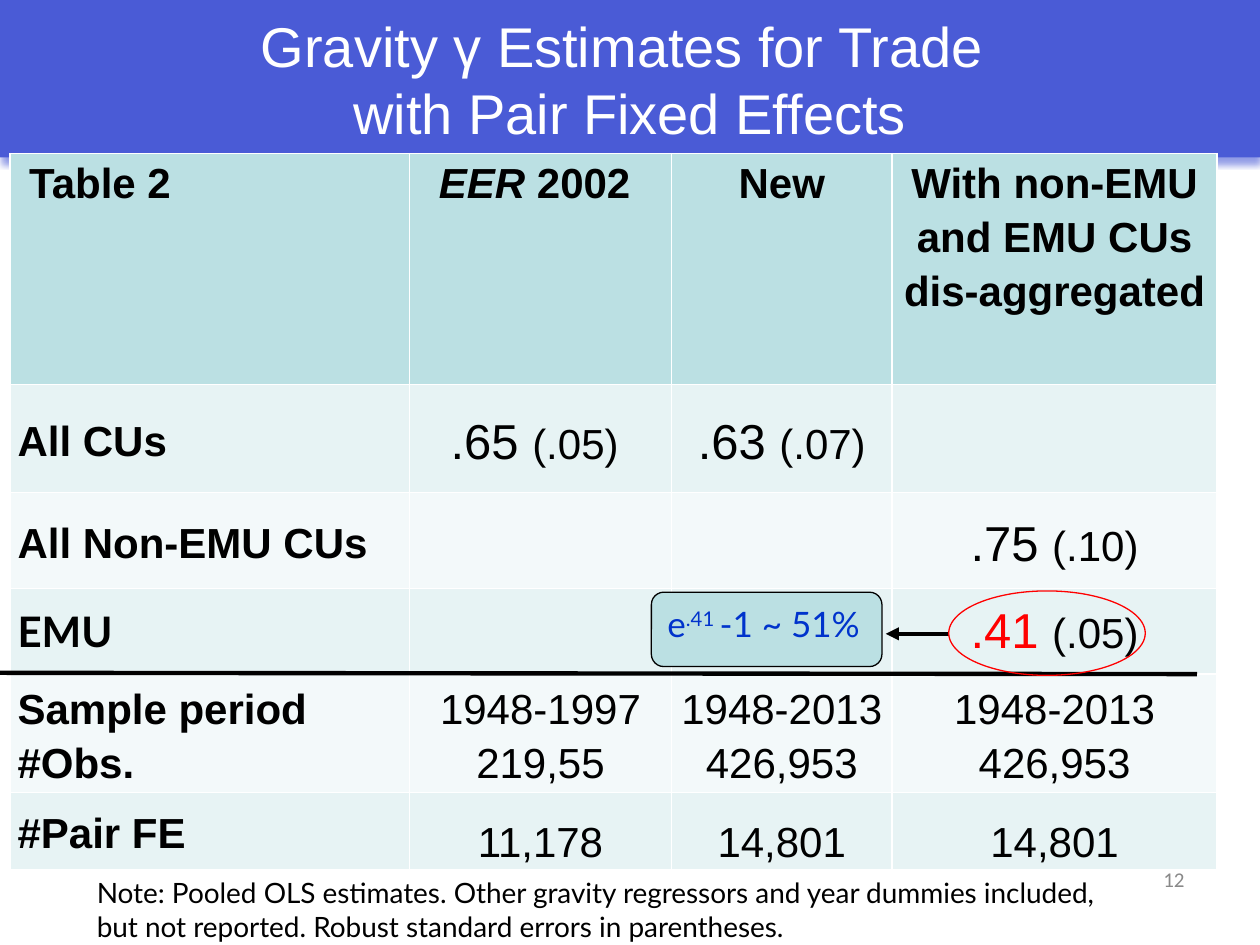
import pptx
import pptx.util
import pptx.dml.color
import pptx.enum.shapes
import pptx.enum.text
import pptx.oxml.ns
import lxml.etree

Inches = pptx.util.Inches
Pt = pptx.util.Pt
RGBColor = pptx.dml.color.RGBColor
Shape = pptx.enum.shapes.MSO_SHAPE
Align = pptx.enum.text.PP_ALIGN
Anchor = pptx.enum.text.MSO_ANCHOR
qn = pptx.oxml.ns.qn

WHITE = RGBColor(0xFF, 0xFF, 0xFF)
BLACK = RGBColor(0, 0, 0)
RED = RGBColor(0xFF, 0, 0)
GRAY = RGBColor(0x89, 0x89, 0x89)
BANNER = RGBColor(0x4A, 0x5B, 0xD6)
LINK_BLUE = RGBColor(0, 0x33, 0xCC)
TEAL = RGBColor(0xBB, 0xE0, 0xE3)
BANDS = (RGBColor(0xE7, 0xF3, 0xF4), RGBColor(0xF3, 0xF9, 0xFA))


class SlideBuilder:
    heading_font = "Arial"
    body_font = "Lato"

    def __init__(self, page):
        self.page = page

    def style(self, font, size, color, name=None, bold=None):
        font.size, font.name, font.bold = Pt(size), name or self.body_font, bold
        font.color.rgb = color

    def title(self, text, left, top, width, height):
        box = self.page.shapes.title
        box.left, box.top, box.width, box.height = map(Inches, (left, top, width, height))
        box.fill.solid()
        box.fill.fore_color.rgb = BANNER
        box.text_frame.text = text
        box.text_frame.vertical_anchor = Anchor.MIDDLE
        para = box.text_frame.paragraphs[0]
        para.alignment = Align.CENTER
        self.style(para.font, 32, WHITE, self.heading_font)
        # Soft shadow along the lower edge
        effects = lxml.etree.SubElement(box._element.spPr, qn("a:effectLst"))
        shadow = lxml.etree.SubElement(effects, qn("a:outerShdw"),
                                       blurRad="40000", dist="50000", dir="5400000")
        color = lxml.etree.SubElement(shadow, qn("a:srgbClr"), val=str(BANNER))
        lxml.etree.SubElement(color, qn("a:alpha"), val="60000")

    def text(self, text, left, top, width, height, size, color, name=None, align=None):
        box = self.page.shapes.add_textbox(*map(Inches, (left, top, width, height)))
        box.text_frame.word_wrap = True
        para = box.text_frame.paragraphs[0]
        para.text, para.alignment = text, align
        self.style(para.font, size, color, name)

    def shape(self, kind, left, top, width, height, line, fill=None):
        box = self.page.shapes.add_shape(kind, *map(Inches, (left, top, width, height)))
        box.shadow.inherit = False
        if fill is None:
            box.fill.background()
        else:
            box.fill.solid()
            box.fill.fore_color.rgb = fill
        box.line.color.rgb = line
        box.line.width = Pt(0.75)
        return box

    def formula(self, box, parts):
        frame = box.text_frame
        frame.word_wrap = False
        frame.vertical_anchor = Anchor.TOP
        para = frame.paragraphs[0]
        para.alignment = Align.LEFT
        self.style(para.font, 20, LINK_BLUE)
        for text, raised in parts:
            span = para.add_run()
            span.text = text
            if raised:
                span._r.get_or_add_rPr().set("baseline", "30000")

    def line(self, x1, y1, x2, y2, arrow=False):
        link = self.page.shapes.add_connector(
            pptx.enum.shapes.MSO_CONNECTOR.STRAIGHT, *map(Inches, (x1, y1, x2, y2)))
        link.line.color.rgb = BLACK
        link.line.width = Pt(2.5)
        if arrow:
            lxml.etree.SubElement(link.line._get_or_add_ln(), qn("a:tailEnd"), type="triangle")
        lxml.etree.SubElement(link._element.spPr, qn("a:effectLst"))

    def cell(self, cell, paragraphs, fill, anchor, align, spacing, name, bold):
        cell.fill.solid()
        cell.fill.fore_color.rgb = fill
        cell.vertical_anchor = anchor
        cell.margin_left = cell.margin_right = Inches(0.06)
        cell.margin_top = cell.margin_bottom = 0
        for index, spans in enumerate(paragraphs):
            frame = cell.text_frame
            para = frame.add_paragraph() if index else frame.paragraphs[0]
            para.alignment, para.line_spacing = align, spacing
            self.style(para.font, 24, BLACK, name, bold)
            for text, changes in spans:
                span = para.add_run()
                span.text = text
                span.font.italic = changes.get("italic")
                if "size" in changes:
                    span.font.size = Pt(changes["size"])
                if "color" in changes:
                    span.font.color.rgb = changes["color"]

    def table(self, rows, left, top, widths, heights):
        grid = self.page.shapes.add_table(
            len(rows), len(widths), Inches(left), Inches(top),
            Inches(sum(widths)), Inches(sum(heights))).table
        for column, width in zip(grid.columns, widths):
            column.width = Inches(width)
        for r, (row, height) in enumerate(zip(rows, heights)):
            grid.rows[r].height = Inches(height)
            for c, paragraphs in enumerate(row):
                spacing = 1.15
                if r == 3:
                    spacing = 1.0
                elif r == 5 and c:
                    spacing = 1.5
                self.cell(
                    grid.cell(r, c), paragraphs,
                    fill=BANDS[(r - 1) % 2] if r else TEAL,
                    anchor=Anchor.MIDDLE if r else Anchor.TOP,
                    align=Align.CENTER if c else Align.LEFT,
                    spacing=spacing,
                    name=self.body_font if (r, c) == (3, 0) else self.heading_font,
                    bold=r == 0 or c == 0)


def plain(*lines):
    return [[(line, {})] for line in lines]


def estimate(value, error, color=BLACK):
    return [[(value + " ", {"size": 28, "color": color}), (error, {})]]


EMPTY = []
ROWS = [
    [plain(" Table 2"), [[("EER", {"italic": True}), (" 2002 ", {})]],
     plain("New"), plain("With non-EMU and EMU CUs dis-aggregated")],
    [plain("All CUs"), estimate(".65", "(.05) "), estimate(".63", "(.07)"), EMPTY],
    [plain("All Non-EMU CUs"), EMPTY, EMPTY, estimate(".75", "(.10)")],
    [plain("EMU"), EMPTY, EMPTY, estimate(".41", "(.05)", RED)],
    [plain("Sample period", "#Obs."), plain("1948-1997", "219,55"),
     plain("1948-2013", "426,953"), plain("1948-2013", "426,953")],
    [plain("#Pair FE"), plain("11,178"), plain("14,801"), plain("14,801")],
]


def main():
    deck = pptx.Presentation()
    deck.slide_width, deck.slide_height = Inches(10), Inches(7.5)
    slide = SlideBuilder(deck.slides.add_slide(deck.slide_layouts[5]))

    # Title banner
    slide.title("Gravity γ Estimates for Trade \vwith Pair Fixed Effects", 0, 0, 10, 1.25)

    # Estimates table
    slide.table(ROWS, 0.08, 1.22, widths=(3.17, 2.08, 1.75, 2.58),
                heights=(1.83, 0.86, 0.76, 0.68, 0.94, 0.61))

    # Page number and note
    slide.text("12", 7.17, 6.83, 2.33, 0.52, 12, GRAY, "Calibri", Align.RIGHT)
    slide.text("Note: Pooled OLS estimates. Other gravity regressors and year dummies "
               "included, but not reported. Robust standard errors in parentheses.",
               0.67, 6.9, 8.17, 0.91, 16, BLACK)

    # Rule between estimates and sample details
    slide.line(0, 5.34, 9.5, 5.35)

    # Callout for the EMU estimate
    callout = slide.shape(Shape.ROUNDED_RECTANGLE, 5.17, 4.7, 1.83, 0.59, BLACK, TEAL)
    slide.formula(callout, [("e", False), (".41 ", True), ("-1 ~ 51%", False)])
    slide.line(7.53, 5.03, 7.03, 5.03, arrow=True)
    slide.shape(Shape.OVAL, 7.53, 4.69, 1.56, 0.67, RED)

    deck.save("out.pptx")


if __name__ == "__main__":
    main()
